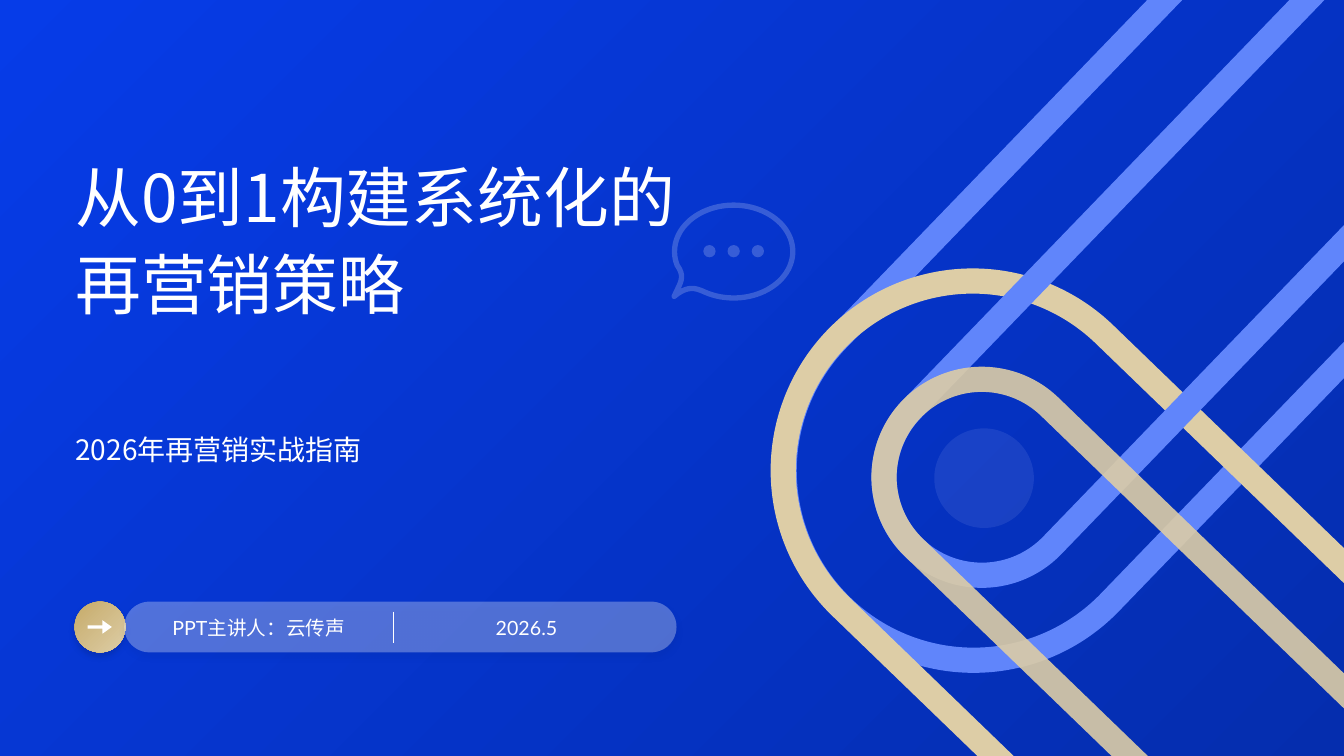
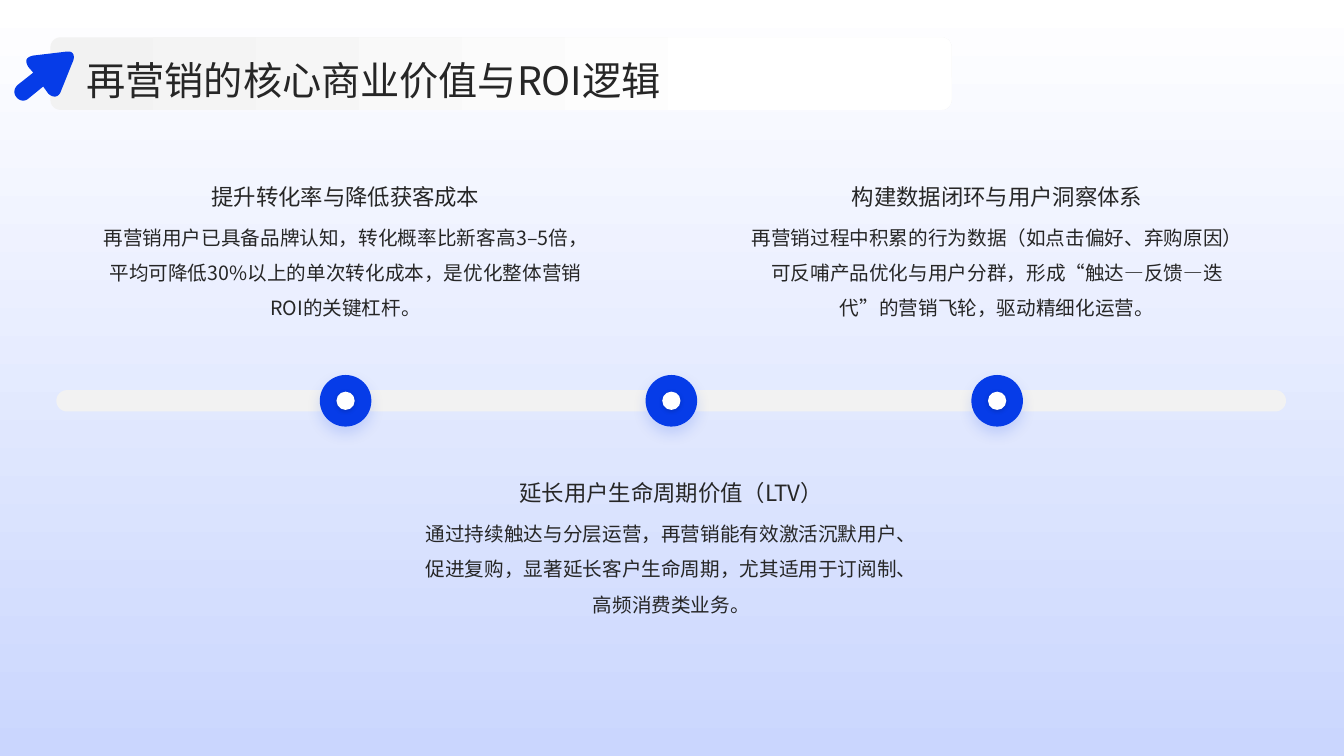
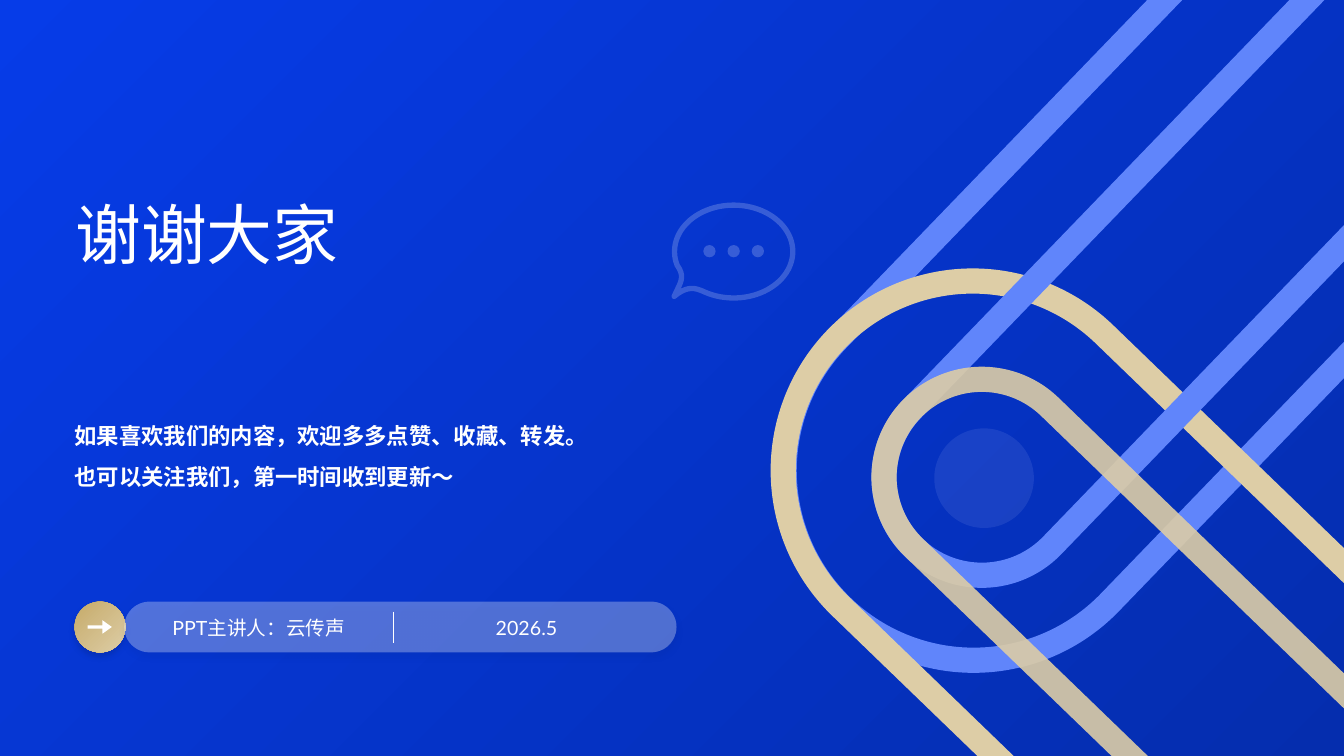
from math import cos, radians, sin

from pptx import Presentation
from pptx.dml.color import RGBColor
from pptx.enum.shapes import MSO_CONNECTOR as Connector, MSO_SHAPE as Shape
from pptx.enum.text import MSO_ANCHOR as Anchor, MSO_AUTO_SIZE as AutoSize, PP_ALIGN as Align
from pptx.oxml.ns import qn
from pptx.oxml.xmlchemy import OxmlElement
from pptx.util import Cm, Pt

CJK, LATIN = "Noto Sans CJK SC", "Lato"
WHITE, INK, GREY = "FFFFFF", "262626", "F2F2F2"
BLUE, NAVY, SKY, PALE = "063CE8", "052DAE", "6085FB", "CAD6FE"
GOLD, SAND = "C6AB6A", "DDCDA6"
BAR_SHADOW = ("031E74", 25, 4, 3)
NODE_SHADOW = (BLUE, 15, 10, 5)
CORE_SHADOW = ("000000", 15, 3, 1)

COVER_TITLE = {"size": 47, "color": WHITE, "spacing": 1.1, "anchor": Anchor.MIDDLE}
SLIDE_TITLE = {"size": 28, "color": INK, "spacing": 1.1, "anchor": Anchor.MIDDLE}
SUBTITLE = {"size": 20, "color": WHITE, "spacing": 1.1}
CLOSING = {"size": 16, "color": WHITE, "spacing": 1.5, "bold": True}
BAR_LABEL = {"size": 14, "color": WHITE, "spacing": 1.1, "font": LATIN,
             "align": Align.CENTER, "anchor": Anchor.MIDDLE}
HEADING = {"size": 16, "color": INK, "spacing": 1.3, "align": Align.CENTER,
           "anchor": Anchor.BOTTOM}
BODY = {"size": 14, "color": INK, "spacing": 1.5, "align": Align.CENTER}


def rgb(value):
    return RGBColor.from_string(value)


def set_all(target, values):
    for name, value in values.items():
        setattr(target, name, value)


def place(shape, box):
    set_all(shape, dict(zip(("left", "top", "width", "height"), map(Cm, box))))


def write(shape, text, style):
    frame = shape.text_frame
    set_all(frame, {
        "word_wrap": True, "auto_size": AutoSize.NONE,
        "vertical_anchor": style.get("anchor", Anchor.TOP),
        "margin_left": 0, "margin_top": 0, "margin_right": 0, "margin_bottom": 0,
    })
    paragraph = frame.paragraphs[0]
    set_all(paragraph, {"alignment": style.get("align", Align.LEFT),
                        "line_spacing": style["spacing"]})
    run = paragraph.add_run()
    run.text = text
    set_all(run.font, {"size": Pt(style["size"]), "name": style.get("font", CJK),
                       "bold": style.get("bold", False)})
    run.font.color.rgb = rgb(style["color"])
    east_asian = OxmlElement("a:ea")
    east_asian.set("typeface", CJK)
    run.font.language_id = None
    run._r.get_or_add_rPr().append(east_asian)


def add_text(slide, box, text, style):
    write(slide.shapes.add_textbox(*map(Cm, box)), text, style)


def set_title(slide, box, text, style):
    title = slide.shapes.title
    place(title, box)
    write(title, text, style)
    slide.shapes._spTree.append(title._element)


def set_gradient(fill, colors, angle, end=1):
    fill.gradient()
    fill.gradient_angle = angle
    for stop, color, position in zip(fill.gradient_stops, colors, (0, end)):
        stop.color.rgb = rgb(color)
        stop.position = position


def set_opacity(color_element, percent):
    alpha = OxmlElement("a:alpha")
    alpha.set("val", str(percent * 1000))
    color_element.append(alpha)


def add_shadow(shape, color, opacity, blur, distance):
    shadow = OxmlElement("a:outerShdw")
    for name, value in (("blurRad", Pt(blur)), ("dist", Pt(distance)), ("dir", 5400000),
                        ("algn", "t"), ("rotWithShape", 0)):
        shadow.set(name, str(value))
    color_element = OxmlElement("a:srgbClr")
    color_element.set("val", color)
    set_opacity(color_element, opacity)
    shadow.append(color_element)
    shape._element.spPr.find(qn("a:effectLst")).append(shadow)


def paint(shape, fill=None, line=None, width=1, opacity=100, shadow=None):
    shape.shadow.inherit = False
    if fill:
        shape.fill.solid()
        shape.fill.fore_color.rgb = rgb(fill)
    else:
        shape.fill.background()
    if line:
        shape.line.color.rgb = rgb(line)
        shape.line.width = Pt(width)
    else:
        shape.line.fill.background()
    if opacity < 100:
        for color_element in shape._element.spPr.iter(qn("a:srgbClr")):
            set_opacity(color_element, opacity)
    if shadow:
        add_shadow(shape, *shadow)


def add_shape(slide, kind, box, adjust=(), rotation=0, **look):
    shape = slide.shapes.add_shape(kind, *map(Cm, box))
    for index, value in enumerate(adjust):
        shape.adjustments[index] = value
    shape.rotation = rotation
    paint(shape, **look)
    return shape


def add_disc(slide, x, y, diameter, **look):
    box = (x - diameter / 2, y - diameter / 2, diameter, diameter)
    return add_shape(slide, Shape.OVAL, box, **look)


def curve(start, first, second, end, steps=10):
    points = []
    for step in range(1, steps + 1):
        t = step / steps
        weights = ((1 - t) ** 3, 3 * t * (1 - t) ** 2, 3 * t * t * (1 - t), t ** 3)
        points.append(tuple(sum(w * p[axis] for w, p in zip(weights, (start, first, second, end)))
                            for axis in (0, 1)))
    return points


def add_outline(slide, left, top, points, **look):
    points = [(Cm(left + x), Cm(top + y)) for x, y in points]
    builder = slide.shapes.build_freeform(*points[0])
    builder.add_line_segments(points[1:], close=True)
    paint(builder.convert_to_shape(), **look)


def add_ribbons(slide, x, y):
    ribbons = (
        (0.07, -17.61, 9.55, 24.26, 224, SKY, 100),
        (-1.36, -6.54, 9.55, 19.84, 314, SAND, 100),
        (1.97, -13.6, 4.93, 17.86, 224, SKY, 100),
        (0.96, -3.97, 4.93, 14.61, 314, SAND, 90),
    )
    for left, top, width, height, rotation, color, opacity in ribbons:
        add_shape(slide, Shape.ROUND_2_SAME_RECTANGLE, (x + left, y + top, width, height),
                  (0.5, 0), rotation, line=color, width=18, opacity=opacity)
    add_disc(slide, x, y, 2.51, fill=PALE, opacity=10)


def add_speech_bubble(slide, x, y):
    tip = (-1.5, 1.13)
    points = [(1.49 * cos(radians(angle)), 1.17 * sin(radians(angle)))
              for angle in range(163, 480, 4)]
    points += curve(points[-1], (-0.95, 0.92), (-1.15, 0.84), tip)
    points += curve(tip, (-1.36, 0.8), (-1.2, 0.66), points[0])[:-1]
    add_outline(slide, x, y, points, line=WHITE, width=3.8, opacity=20)
    for column in (-1, 0, 1):
        add_disc(slide, x + column * 0.61, y - 0.01, 0.31, fill=WHITE, opacity=20)


def add_presenter_bar(slide, left, top, height=1.28):
    middle = top + height / 2
    disc = add_disc(slide, left + height / 2, middle, height, shadow=BAR_SHADOW)
    set_gradient(disc.fill, (GOLD, SAND), 315)
    add_shape(slide, Shape.RIGHT_ARROW, (left + 0.33, middle - 0.17, 0.61, 0.34),
              (0.24, 0.7), fill=WHITE)
    add_shape(slide, Shape.ROUNDED_RECTANGLE, (left + 1.25, top, 13.92, height), (0.5,),
              fill=WHITE, opacity=30, shadow=BAR_SHADOW)
    for offset, label in ((2.01, "PPT主讲人：云传声"), (8.76, "2026.5")):
        add_text(slide, (left + offset, middle - 0.43, 5.26, 0.86), label, BAR_LABEL)
    x = left + 8.03
    divider = slide.shapes.add_connector(
        Connector.STRAIGHT, *map(Cm, (x, middle - 0.39, x, middle + 0.39)))
    divider.line.color.rgb = rgb(WHITE)
    divider.line.width = Pt(1)
    divider._element.spPr.append(OxmlElement("a:effectLst"))


def new_slide(presentation, colors, angle):
    slide = presentation.slides.add_slide(presentation.slide_layouts[5])
    set_gradient(slide.background.fill, colors, angle)
    return slide


def add_cover(presentation, title, title_top, text, text_box, text_style):
    slide = new_slide(presentation, (BLUE, NAVY), 315)
    add_ribbons(slide, 24.8, 12.05)
    add_presenter_bar(slide, 1.88, 15.16)
    add_speech_bubble(slide, 18.49, 6.34)
    set_title(slide, (1.9, title_top, 16.36, 7.47), title, COVER_TITLE)
    add_text(slide, text_box, text, text_style)


def add_title_band(slide, left, top, title):
    band = add_shape(slide, Shape.ROUNDED_RECTANGLE, (left, top, 22.71, 1.83), (0.14,))
    set_gradient(band.fill, (GREY, WHITE), 0, 0.8)
    start = (0.69, 1.47)
    arrow = [start]
    for segment in (
        ((0.65, 1.52), (0.66, 1.58), (0.71, 1.68)),
        ((0.84, 1.83),), ((0.46, 2.13),),
        ((0.36, 2.21), (0.33, 2.34), (0.41, 2.44)),
        ((0.48, 2.54), (0.61, 2.57), (0.71, 2.49)),
        ((1.09, 2.18),), ((1.22, 2.36),),
        ((1.22, 2.36), (1.4, 2.54), (1.52, 2.34)),
        ((1.85, 1.52),),
        ((1.85, 1.52), (1.93, 1.27), (1.68, 1.3)),
        ((0.84, 1.4),),
        ((0.84, 1.4), (0.74, 1.42), start),
    ):
        arrow += curve(arrow[-1], *segment) if len(segment) == 3 else segment
    add_outline(slide, left - 1.27, top - 0.94, arrow, fill=BLUE)
    set_title(slide, (left + 0.91, top + 0.36, 29.64, 1.3), title, SLIDE_TITLE)


def add_milestone(slide, x, y, text_top, heading, body, width=12.5):
    add_disc(slide, x, y, 1.3, fill=BLUE, shadow=NODE_SHADOW)
    add_disc(slide, x, y, 0.46, fill=WHITE, shadow=CORE_SHADOW)
    left = x - width / 2
    add_text(slide, (left, text_top, width, 1.47), heading, HEADING)
    add_text(slide, (left, text_top + 1.58, width, 3.5), body, BODY)


def add_timeline(presentation, title, milestones):
    slide = new_slide(presentation, (WHITE, PALE), 270)
    left, middle, step = 1.42, 10.1, 8.21
    add_shape(slide, Shape.ROUNDED_RECTANGLE, (left, middle - 0.27, 30.99, 0.54), (0.5,),
              fill=GREY)
    for index, (heading, body) in enumerate(milestones):
        text_top = middle + (1.18 if index % 2 else -6.29)
        add_milestone(slide, left + 7.29 + index * step, middle, text_top, heading, body)
    add_title_band(slide, 1.27, 0.94, title)


def main():
    presentation = Presentation()
    presentation.slide_width, presentation.slide_height = Cm(33.87), Cm(19.05)
    add_cover(presentation, "从0到1构建系统化的再营销策略", 2.21,
              "2026年再营销实战指南", (1.9, 10.82, 15.95, 2.51), SUBTITLE)
    add_timeline(presentation, "再营销的核心商业价值与ROI逻辑", (
        ("提升转化率与降低获客成本",
         "再营销用户已具备品牌认知，转化概率比新客高3–5倍，平均可降低30%以上的单次转化成本，"
         "是优化整体营销ROI的关键杠杆。"),
        ("延长用户生命周期价值（LTV）",
         "通过持续触达与分层运营，再营销能有效激活沉默用户、促进复购，显著延长客户生命周期，"
         "尤其适用于订阅制、高频消费类业务。"),
        ("构建数据闭环与用户洞察体系",
         "再营销过程中积累的行为数据（如点击偏好、弃购原因）可反哺产品优化与用户分群，"
         "形成“触达—反馈—迭代”的营销飞轮，驱动精细化运营。"),
    ))
    add_cover(presentation, "谢谢大家", 2.03,
              "如果喜欢我们的内容，欢迎多多点赞、收藏、转发。也可以关注我们，第一时间收到更新～",
              (1.88, 10.31, 13.21, 2.77), CLOSING)
    presentation.save("out.pptx")


if __name__ == "__main__":
    main()
